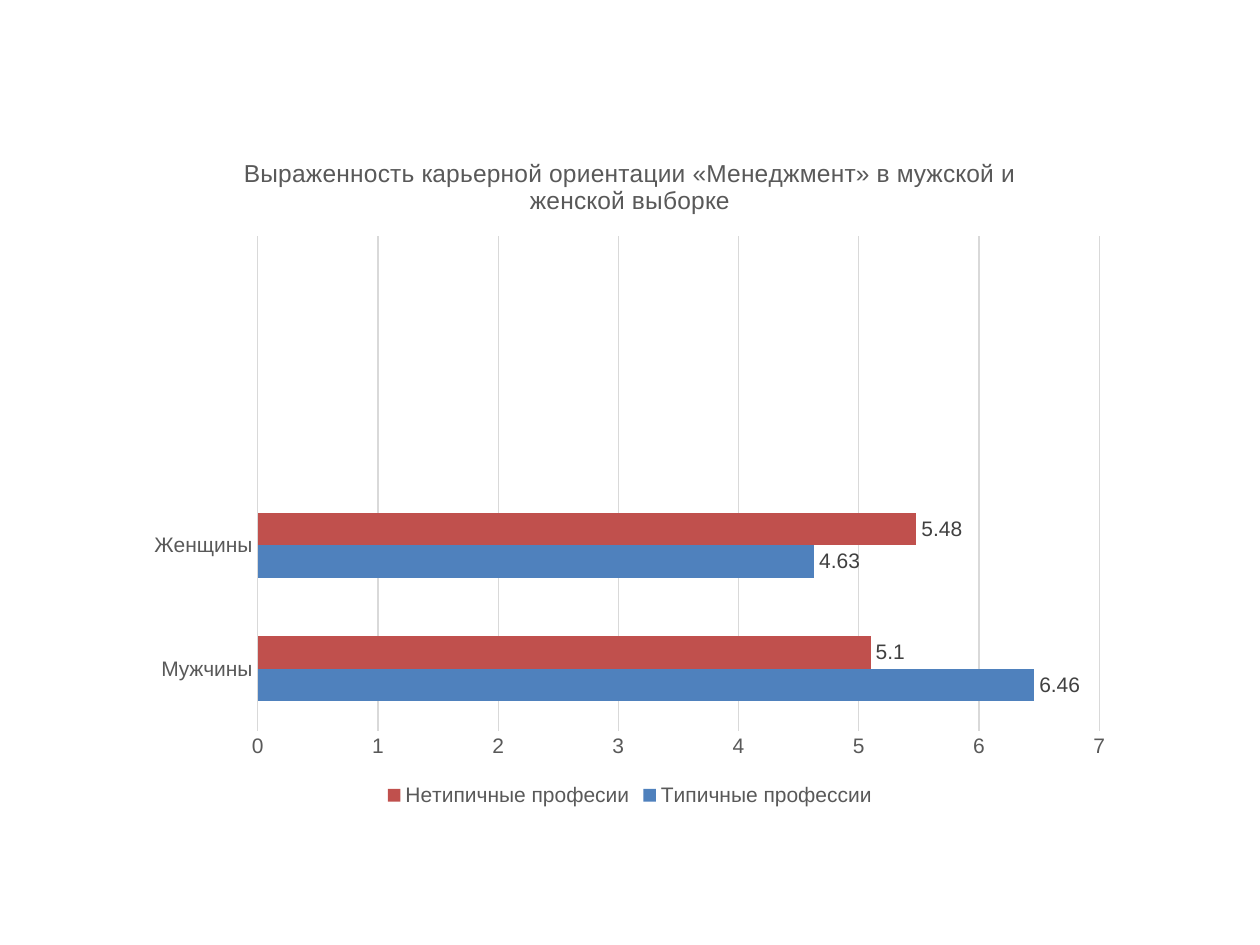
from dataclasses import dataclass

from lxml import etree
from pptx import Presentation
from pptx.chart.data import CategoryChartData
from pptx.dml.color import RGBColor
from pptx.enum import chart as kinds
from pptx.oxml.ns import qn
from pptx.util import Cm, Pt

FONT = "Arial"
BLACK = RGBColor(0x00, 0x00, 0x00)
GREY = RGBColor(0x59, 0x59, 0x59)
DARK = RGBColor(0x40, 0x40, 0x40)
PALE = RGBColor(0xD9, 0xD9, 0xD9)
BLUE = RGBColor(0x4F, 0x81, 0xBD)
RED = RGBColor(0xC0, 0x50, 0x4D)

TITLE = "Выраженность карьерной ориентации «Менеджмент» в мужской и женской выборке"
GROUPS = ("Мужчины", "Женщины", "", "")


@dataclass
class Series:
    name: str
    vals: tuple
    color: RGBColor


SERIES = (
    Series("Типичные профессии", (6.46, 4.63, None, None), BLUE),
    Series("Нетипичные професии", (5.1, 5.48, None, None), RED),
)


def style(font, size: float, color: RGBColor) -> None:
    font.name = FONT
    font.size = Pt(size)
    font.bold = False
    font.color.rgb = color


def rule(line) -> None:
    """Draw a thin pale line."""
    line.color.rgb = PALE
    line.width = Pt(0.75)


def place(chart, **frac: float) -> None:
    """Fix the inner plot area as fractions of the chart."""
    area = chart.plots[0]._element.getparent()
    for old in area.findall(qn("c:layout")):
        area.remove(old)
    layout = etree.Element(qn("c:layout"))
    area.insert(0, layout)
    box = etree.SubElement(layout, qn("c:manualLayout"))
    marks = {"layoutTarget": "inner", "xMode": "edge", "yMode": "edge"}
    for tag, val in {**marks, **frac}.items():
        etree.SubElement(box, qn(f"c:{tag}")).set("val", str(val))


def add_title(chart) -> None:
    chart.has_title = True
    title = chart.chart_title
    title.include_in_layout = False
    run = title.text_frame.paragraphs[0].add_run()
    run.text = TITLE
    style(run.font, 14, GREY)


def set_axes(chart) -> None:
    cat, val = chart.category_axis, chart.value_axis
    for axis in (cat, val):
        axis.major_tick_mark = axis.minor_tick_mark = kinds.XL_TICK_MARK.NONE
        style(axis.tick_labels.font, 12, GREY)
    rule(cat.format.line)
    val.format.line.fill.background()
    val.has_major_gridlines = True
    rule(val.major_gridlines.format.line)
    val.minimum_scale, val.maximum_scale, val.major_unit = 0, 7, 1


def add_legend(chart) -> None:
    chart.has_legend = True
    chart.legend.position = kinds.XL_LEGEND_POSITION.BOTTOM
    chart.legend.include_in_layout = False
    style(chart.legend.font, 12, GREY)


def paint(chart) -> None:
    """Colour and label the bars."""
    plot = chart.plots[0]
    plot.vary_by_categories = False
    plot.gap_width = 182
    for bars, item in zip(plot.series, SERIES):
        bars.format.fill.solid()
        bars.format.fill.fore_color.rgb = item.color
        bars.invert_if_negative = False
        labels = bars.data_labels
        labels.show_value = True
        labels.position = kinds.XL_LABEL_POSITION.OUTSIDE_END
        style(labels.font, 12, DARK)


def main() -> None:
    deck = Presentation()
    deck.slide_width, deck.slide_height = Cm(25.4), Cm(19.05)
    slide = deck.slides.add_slide(deck.slide_layouts[6])
    data = CategoryChartData()
    data.categories = GROUPS
    for item in SERIES:
        data.add_series(item.name, item.vals)
    chart = slide.shapes.add_chart(
        kinds.XL_CHART_TYPE.BAR_CLUSTERED,
        Cm(2.72), Cm(2.67), Cm(19.96), Cm(13.69), data,
    ).chart
    style(chart.font, 10, BLACK)
    add_title(chart)
    set_axes(chart)
    add_legend(chart)
    paint(chart)
    place(chart, x=0.124, y=0.153, w=0.85, h=0.728)
    deck.save("out.pptx")


if __name__ == "__main__":
    main()
